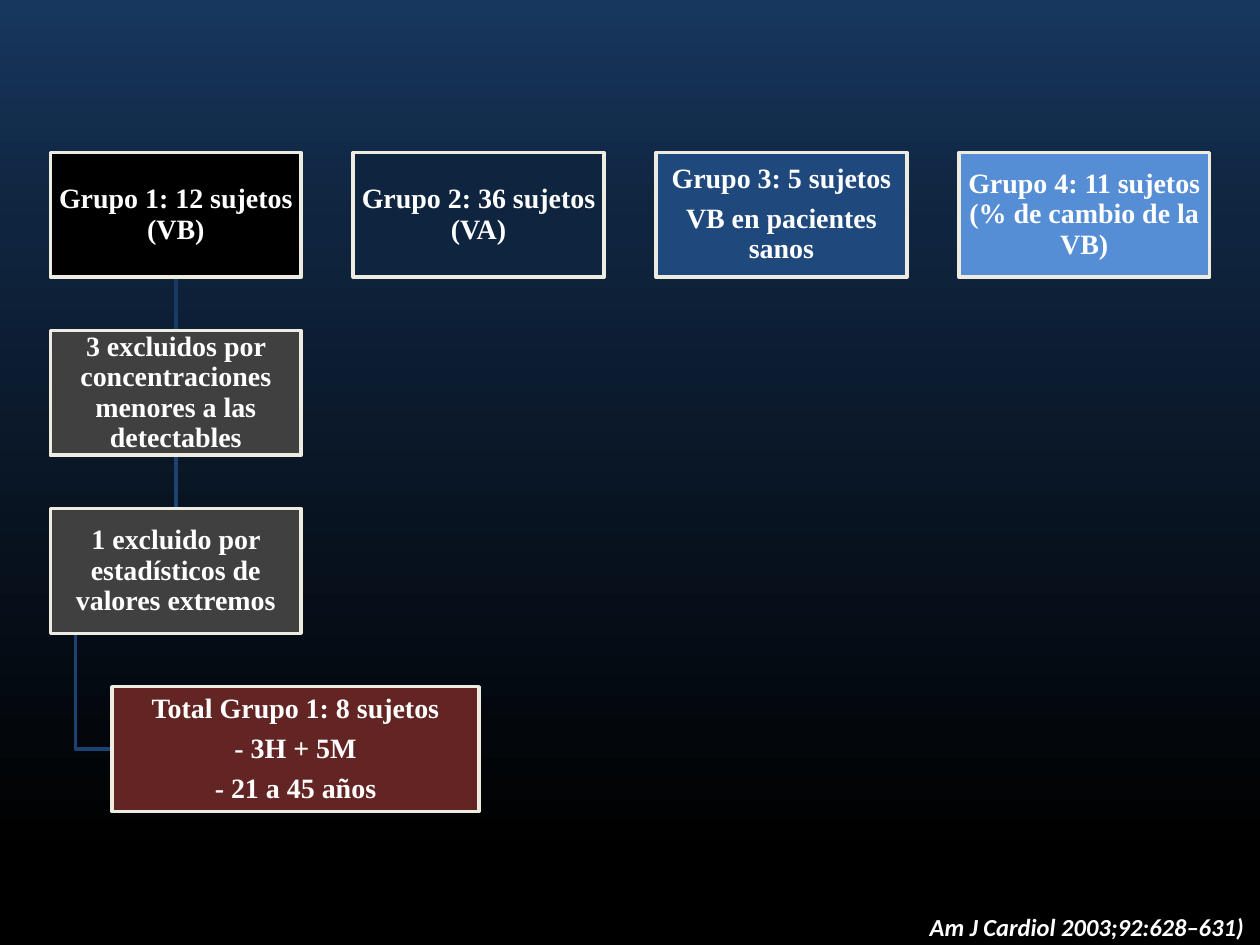
import copy

import pptx
import pptx.dml.color
import pptx.enum.shapes
import pptx.enum.text
import pptx.oxml
import pptx.oxml.ns
import pptx.util

SLIDE_W, SLIDE_H = 10, 7.5
MARGIN = 0.4
BOX_W, BOX_H = 1.99, 0.99
FIRST_ROW, LAST_ROW = 1.21, 5.45
COLUMN_STEP = (SLIDE_W - 2 * MARGIN - BOX_W) / 3
ROW_STEP = (LAST_ROW - FIRST_ROW) / 3
TOTAL_INDENT, TOTAL_W = 0.49, 2.91
BRANCH_INDENT = 0.2

GROUPS = [
    ("000000", ["Grupo 1: 12 sujetos (VB)"]),
    ("0F243E", ["Grupo 2: 36 sujetos (VA)"]),
    ("1F497D", ["Grupo 3: 5 sujetos", "VB en pacientes sanos"]),
    ("558ED5", ["Grupo 4: 11 sujetos (% de cambio de la VB)"]),
]
EXCLUSIONS = [
    "3 excluidos por concentraciones menores a las detectables",
    "1 excluido por estadísticos de valores extremos",
]
TOTAL = ["Total Grupo 1: 8 sujetos", "- 3H + 5M", "- 21 a 45 años"]
LINKS = ["193A64", "1C4271"]


def inch(value):
    return pptx.util.Inches(value)


def color(value):
    return pptx.dml.color.RGBColor.from_string(value)


def column_left(column):
    return MARGIN + column * COLUMN_STEP


def row_top(row):
    return FIRST_ROW + row * ROW_STEP


def paint_background(slide, stops):
    fill = slide.background.fill
    fill.gradient()
    fill.gradient_angle = 270
    stop_list = slide.element.xpath(".//a:gsLst")[0]
    while len(stop_list) < len(stops):
        stop_list.append(copy.deepcopy(stop_list[-1]))
    for stop, (position, value) in zip(fill.gradient_stops, stops):
        stop.position = position
        stop.color.rgb = color(value)


def style_line(line, value):
    line.color.rgb = color(value)
    line.width = pptx.util.Pt(2)


def add_text(paragraph, text, size, font):
    run = paragraph.add_run()
    run.text = text
    run.font.size = pptx.util.Pt(size)
    run.font.name = font
    run.font.bold = True
    run.font.color.rgb = color("FFFFFF")
    return run


def add_box(slide, left, row, fill, lines, width=BOX_W):
    box = slide.shapes.add_shape(
        pptx.enum.shapes.MSO_SHAPE.RECTANGLE,
        inch(left), inch(row_top(row)), inch(width), inch(BOX_H))
    box.shadow.inherit = False
    box.fill.solid()
    box.fill.fore_color.rgb = color(fill)
    style_line(box.line, "EEECE1")
    frame = box.text_frame
    frame.word_wrap = True
    frame.vertical_anchor = pptx.enum.text.MSO_ANCHOR.MIDDLE
    frame.margin_left = frame.margin_right = inch(0.01)
    frame.margin_top = frame.margin_bottom = inch(0.01)
    for index, text in enumerate(lines):
        paragraph = frame.add_paragraph() if index else frame.paragraphs[0]
        paragraph.alignment = pptx.enum.text.PP_ALIGN.CENTER
        paragraph.line_spacing = 0.9
        paragraph.space_after = pptx.util.Pt(5.6)
        add_text(paragraph, text, 16, "Times New Roman")


def add_link(slide, row, value):
    """Join a first-column box to the one below it."""
    center = inch(MARGIN + BOX_W / 2)
    link = slide.shapes.add_connector(
        pptx.enum.shapes.MSO_CONNECTOR.STRAIGHT,
        center, inch(row_top(row) + BOX_H), center, inch(row_top(row + 1)))
    style_line(link.line, value)
    properties = link.element.spPr
    properties.append(properties.makeelement(pptx.oxml.ns.qn("a:effectLst"), {}))


def add_branch(slide, row, value):
    """Draw the right-angled line to the indented total."""
    left = inch(MARGIN + BRANCH_INDENT)
    middle = inch(row_top(row + 1) + BOX_H / 2)
    builder = slide.shapes.build_freeform(left, inch(row_top(row) + BOX_H))
    builder.add_line_segments(
        [(left, middle), (inch(MARGIN + TOTAL_INDENT), middle)], close=False)
    branch = builder.convert_to_shape()
    branch.shadow.inherit = False
    branch.fill.background()
    style_line(branch.line, value)


def add_citation(slide, text):
    citation = slide.shapes.add_textbox(
        inch(7.28), inch(7.19), inch(2.72), inch(0.34))
    frame = citation.text_frame
    frame.word_wrap = False
    frame.auto_size = pptx.enum.text.MSO_AUTO_SIZE.SHAPE_TO_FIT_TEXT
    add_text(frame.paragraphs[0], text, 14, "Calibri").font.italic = True


def main():
    deck = pptx.Presentation()
    deck.slide_width, deck.slide_height = inch(SLIDE_W), inch(SLIDE_H)
    slide = deck.slides.add_slide(deck.slide_layouts[6])
    paint_background(slide, [(0, "17375E"), (0.24, "0F243E"), (0.91, "000000")])

    # Lines go behind the boxes
    add_branch(slide, 2, "1C4271")
    for row, value in enumerate(LINKS):
        add_link(slide, row, value)

    # Groups across the top, exclusions and total below the first
    for column, (fill, lines) in enumerate(GROUPS):
        add_box(slide, column_left(column), 0, fill, lines)
    for row, text in enumerate(EXCLUSIONS, start=1):
        add_box(slide, MARGIN, row, "404040", [text])
    add_box(slide, MARGIN + TOTAL_INDENT, 3, "632523", TOTAL, TOTAL_W)

    # Source of the data
    add_citation(slide, "Am J Cardiol 2003;92:628–631)")
    deck.save("out.pptx")


if __name__ == "__main__":
    main()
